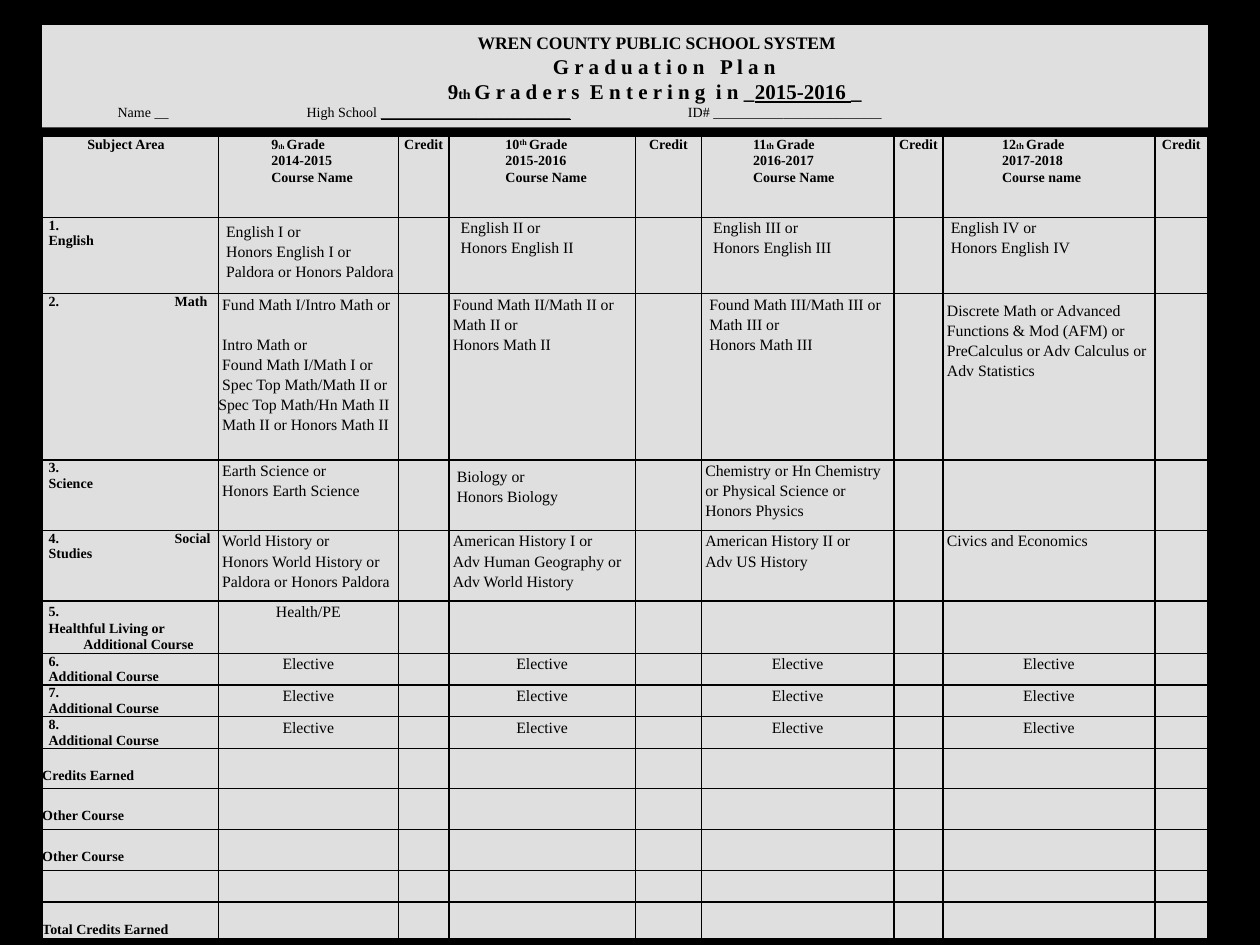
"""Build a four-year high school graduation plan slide with a course table."""
from lxml import etree
from pptx import Presentation
from pptx.dml.color import RGBColor
from pptx.enum.shapes import MSO_SHAPE
from pptx.enum.text import MSO_ANCHOR, PP_ALIGN
from pptx.oxml.ns import qn
from pptx.util import Cm, Pt

BLACK = RGBColor(0x00, 0x00, 0x00)
GRAY = RGBColor(0xDF, 0xDF, 0xDF)
RECTANGLE = MSO_SHAPE.RECTANGLE
MIDDLE = MSO_ANCHOR.MIDDLE
CENTER = PP_ALIGN.CENTER
LEFT = PP_ALIGN.LEFT
FONT = "Times New Roman"
SPACE_WIDTH = Pt(2.25)

COLUMN_WIDTHS = [3.55, 3.63, 1.02, 3.76, 1.33, 3.88, 0.99, 4.27, 1.07]
ROW_HEIGHTS = [1.63, 1.54, 3.35, 1.42, 1.43, 1.05, 0.63, 0.63, 0.64, 0.81, 0.83, 0.82, 0.64, 0.73]
GRADES = [
    (1, "9", 4, "2014-2015", "Course Name", 1.07),
    (3, "10", 8, "2015-2016", "Course Name", 1.14),
    (5, "11", 5, "2016-2017", "Course Name", 1.04),
    (7, "12", 5, "2017-2018", "Course name", 1.19),
]
SUBJECTS = ["English", "Math", "Science", "Social Studies", "Healthful Living or",
            "Additional Course", "Additional Course", "Additional Course"]
TOTALS = {9: "Credits Earned", 10: "Other Course", 11: "Other Course", 13: "Total Credits Earned"}
COURSES = {
    (1, 1): (2, 0.08, ["English I or", "Honors English I or", "Paldora or Honors Paldora"]),
    (1, 3): (3, 0, ["English II or", "Honors English II"]),
    (1, 5): (3, 0, ["English III or", "Honors English III"]),
    (1, 7): (2, 0, ["English IV or", "Honors English IV"]),
    (2, 1): (1, 0, ["Fund Math I/Intro Math or", "Intro Math or", "Found Math I/Math I or",
                    "Spec Top Math/Math II or", "Spec Top Math/Hn Math II",
                    "Math II or Honors Math II"]),
    (2, 3): (1, 0, ["Found Math II/Math II or", "Math II or", "Honors Math II"]),
    (2, 5): (2, 0, ["Found Math III/Math III or", "Math III or", "Honors Math III"]),
    (2, 7): (1, 0.12, ["Discrete Math or Advanced", "Functions & Mod (AFM) or",
                       "PreCalculus or Adv Calculus or", "Adv Statistics"]),
    (3, 1): (1, 0, ["Earth Science or", "Honors Earth Science"]),
    (3, 3): (2, 0.12, ["Biology or", "Honors Biology"]),
    (3, 5): (1, 0, ["Chemistry or Hn Chemistry", "or Physical Science or", "Honors Physics"]),
    (4, 1): (1, 0, ["World History or", "Honors World History or", "Paldora or Honors Paldora"]),
    (4, 3): (1, 0, ["American History I or", "Adv Human Geography or", "Adv World History"]),
    (4, 5): (1, 0, ["American History II or", "Adv US History"]),
    (4, 7): (1, 0, ["Civics and Economics"]),
}


def add_line(frame, pieces, size, bold=True, spacing=None, align=None, left=0, first=0):
    """Write one paragraph from (text, size) pieces, using the empty first paragraph if free."""
    paragraph = frame.paragraphs[0]
    if paragraph.runs:
        paragraph = frame.add_paragraph()
    properties = paragraph._p.get_or_add_pPr()
    properties.set("marL", str(int(left)))
    properties.set("indent", str(int(first)))
    properties.set("defTabSz", str(Cm(2.54)))
    paragraph.alignment = align
    paragraph.line_spacing = spacing
    paragraph.font.name = FONT
    paragraph.font.size = Pt(size)
    paragraph.font.bold = bold
    paragraph.font.color.rgb = BLACK
    for text, piece_size in pieces:
        run = paragraph.add_run()
        run.text = text
        if piece_size != size:
            run.font.size = Pt(piece_size)
    return paragraph


presentation = Presentation()
presentation.slide_width = Cm(25.4)
presentation.slide_height = Cm(19.05)
slide = presentation.slides.add_slide(presentation.slide_layouts[6])
slide.background.fill.solid()
slide.background.fill.fore_color.rgb = BLACK

table = slide.shapes.add_table(len(ROW_HEIGHTS), len(COLUMN_WIDTHS), Cm(0.85), Cm(2.75),
                               Cm(sum(COLUMN_WIDTHS)), Cm(sum(ROW_HEIGHTS))).table
table.first_row = False
table.horz_banding = False
for column, width in zip(table.columns, COLUMN_WIDTHS):
    column.width = Cm(width)
for row, height in zip(table.rows, ROW_HEIGHTS):
    row.height = Cm(height)
for cell in table.iter_cells():
    cell.margin_left = cell.margin_right = cell.margin_top = cell.margin_bottom = 0
    cell_properties = cell._tc.get_or_add_tcPr()
    for side in ("a:lnL", "a:lnR", "a:lnT", "a:lnB"):
        border = etree.SubElement(cell_properties, qn(side), w=str(Pt(1)))
        border_fill = etree.SubElement(border, qn("a:solidFill"))
        etree.SubElement(border_fill, qn("a:srgbClr"), val=str(BLACK))
    cell.fill.solid()
    cell.fill.fore_color.rgb = GRAY

add_line(table.cell(0, 0).text_frame, [("Subject Area", 8)], 8, spacing=Pt(9), left=Cm(0.91))
for column, number, suffix_size, years, heading, left in GRADES:
    frame = table.cell(0, column).text_frame
    grade = add_line(frame, [(number, 8), ("th", suffix_size), (" ", 5), ("Grade", 8)], 8,
                     spacing=Pt(9), left=Cm(left))
    if number == "10":
        grade.runs[1]._r.get_or_add_rPr().set("baseline", "30000")
    add_line(frame, [(years, 8)], 8, spacing=Pt(9), left=Cm(left))
    add_line(frame, [(heading, 8)], 8, spacing=1.15, left=Cm(left))
    add_line(table.cell(0, column + 1).text_frame, [("Credit", 8)], 8, spacing=Pt(9), align=CENTER)

for number, subject in enumerate(SUBJECTS, start=1):
    spacing = 1.15 if number == 5 else Pt(9)
    add_line(table.cell(number, 0).text_frame, [(f"{number}.\t{subject}", 8)], 8,
             spacing=spacing, left=Cm(0.13))
add_line(table.cell(5, 0).text_frame, [("Additional Course", 8)], 8, spacing=Pt(9), left=Cm(0.83))

for (row, column), (spaces, top, lines) in COURSES.items():
    cell = table.cell(row, column)
    cell.margin_top = Cm(top)
    for text in lines:
        left = 0 if text == "Spec Top Math/Hn Math II" else spaces * SPACE_WIDTH
        paragraph = add_line(cell.text_frame, [(text, 9)], 9, False, 1.15, left=left)
        if text == "Fund Math I/Intro Math or":
            paragraph.space_after = Pt(11.4)

add_line(table.cell(5, 1).text_frame, [("Health/PE", 9)], 9, False, 1.15, CENTER)
for row in (6, 7, 8):
    for column in (1, 3, 5, 7):
        add_line(table.cell(row, column).text_frame, [("Elective", 9)], 9, False, 1.15, CENTER)

for row, label in TOTALS.items():
    cell = table.cell(row, 0)
    cell.margin_top = Pt(10)
    add_line(cell.text_frame, [(label, 8)], 8, spacing=1.15)

for cell in table.iter_cells():
    if not cell.text_frame.text:
        paragraph = add_line(cell.text_frame, [], 8)
        etree.SubElement(paragraph._p, qn("a:endParaRPr"), sz="800")

header = slide.shapes.add_shape(RECTANGLE, Cm(0.85), Cm(0.51), Cm(23.5), Cm(2.06))
header.shadow.inherit = False
header.fill.solid()
header.fill.fore_color.rgb = GRAY
header.line.fill.background()
frame = header.text_frame
frame.word_wrap = True
frame.vertical_anchor = MIDDLE
add_line(frame, [("WREN COUNTY PUBLIC SCHOOL SYSTEM", 10)], 10, align=CENTER, first=Cm(1.27))
add_line(frame, [("G r a d u a t i o n   P l a n", 12)], 12, align=CENTER, first=Cm(1.59))
entering = add_line(frame, [("9", 12), ("th ", 8), ("G r a d e r s  E n t e r i n g  i n _", 12),
                            ("2015-2016 ", 12), ("_", 12)], 12, align=CENTER, first=Cm(1.2))
entering.runs[3].font.underline = True
student = add_line(frame, [("Name __\t\tHigh School ", 8), ("_" * 27, 8),
                           ("\t ID# " + "_" * 24, 8)], 8, False, align=LEFT, first=Cm(1.27))
student.runs[1].font.underline = True

presentation.save("out.pptx")
